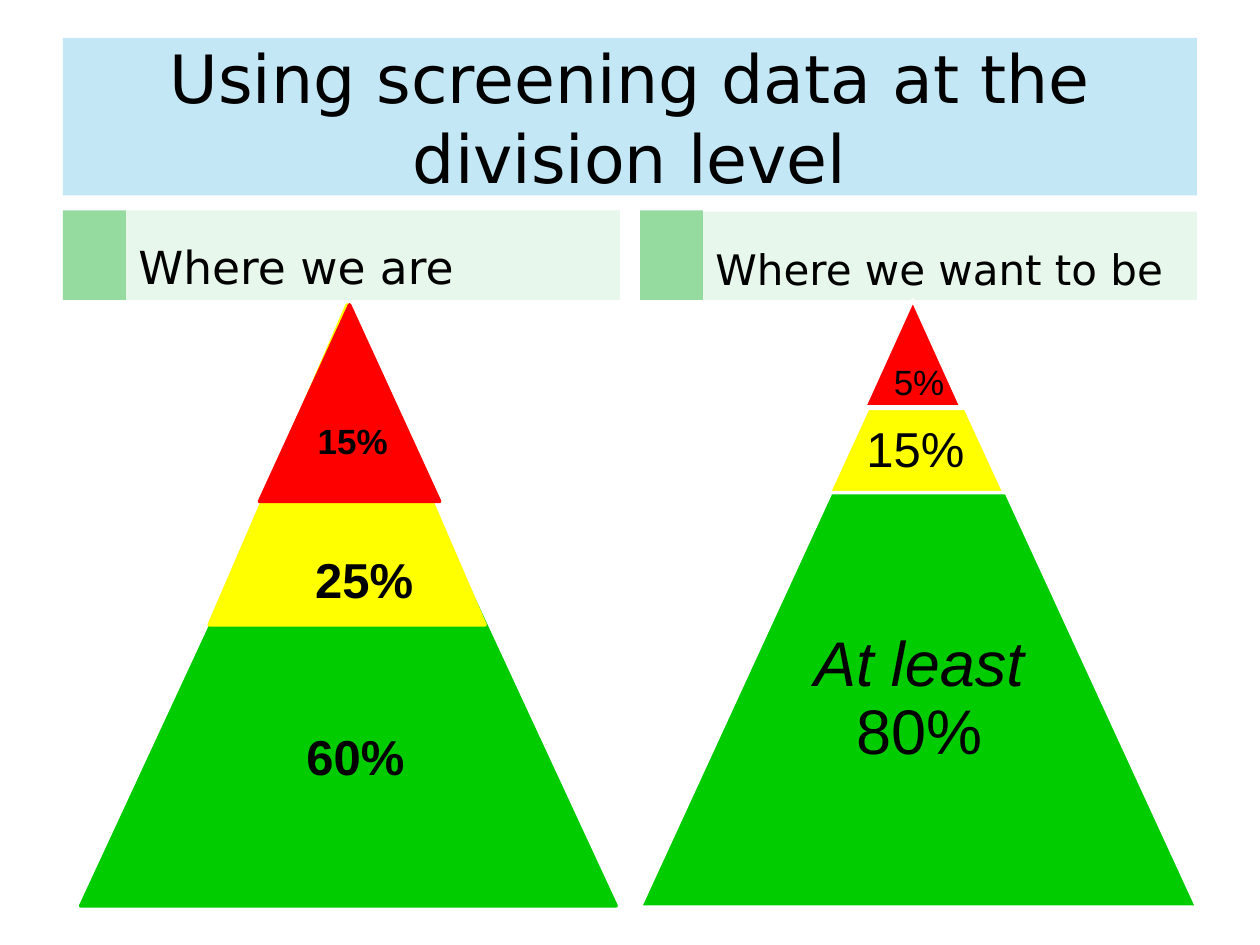
import pptx
import pptx.util
from lxml import etree
from pptx.dml.color import RGBColor
from pptx.enum.shapes import MSO_SHAPE
from pptx.enum.text import MSO_ANCHOR, PP_ALIGN
from pptx.oxml.ns import qn

SCALE = 9144  # EMU per px, 100 px to the inch
RED, YELLOW, GREEN = "FF0000", "FFFF00", "00CC00"
BLACK, WHITE = "000000", "FFFFFF"


def px(length):
    return pptx.util.Emu(length * SCALE)


def paint(color_format, color):
    color_format.rgb = RGBColor.from_string(color)


def add_shape(page, kind, box, fill, line=None, adjust=None):
    shape = page.shapes.add_shape(kind, *map(px, box))
    shape.shadow.inherit = False
    shape.fill.solid()
    paint(shape.fill.fore_color, fill)
    if line:
        paint(shape.line.color, line)
        shape.line.width = pptx.util.Pt(2)
    else:
        shape.line.fill.background()
    if adjust is not None:
        shape.adjustments[0] = adjust
    return shape


def set_alpha(shape, percent):
    color = shape.fill._xPr.find(qn("a:solidFill"))[0]
    etree.SubElement(color, qn("a:alpha"), val=str(percent * 1000))


def write(shape, spans, size, font="Arial", align=PP_ALIGN.CENTER,
          anchor=MSO_ANCHOR.MIDDLE, inset=(10, 5), spacing=None):
    """Write one paragraph; spans are (text, style) pairs, style naming font flags."""
    frame = shape.text_frame
    frame.word_wrap = True
    frame.vertical_anchor = anchor
    frame.margin_left = frame.margin_right = px(inset[0])
    frame.margin_top = frame.margin_bottom = px(inset[1])
    para = frame.paragraphs[0]
    para.alignment = align
    if spacing:
        para.line_spacing = spacing
    for text, style in spans:
        span = para.add_run()
        span.text = text
        span.font.name = font
        span.font.size = pptx.util.Pt(size)
        paint(span.font.color, BLACK)
        for flag in style:
            setattr(span.font, flag, True)


def add_label(page, box, spans, size, **layout):
    label = page.shapes.add_textbox(*map(px, box))
    write(label, spans, size, **layout)


def add_title(page, box, text):
    banner = add_shape(page, MSO_SHAPE.RECTANGLE, box, "A9DCF2")
    set_alpha(banner, 68)
    write(banner, [(text, ())], 38, font="DejaVu Sans")


def add_heading(page, box, text, size, drop=0):
    """Green tab followed by a pale bar, whose top sits lower by drop."""
    left, top, width, height = box
    tab = 50
    add_shape(page, MSO_SHAPE.RECTANGLE, (left, top, tab, height), "95DA9F")
    bar = add_shape(page, MSO_SHAPE.RECTANGLE,
                    (left + tab, top + drop, width - tab, height - drop), "E8F7EB")
    write(bar, [(text, ())], size, font="DejaVu Sans",
          align=PP_ALIGN.LEFT, anchor=MSO_ANCHOR.BOTTOM)


def add_current_pyramid(page, box):
    """Overlapping triangles, the largest at the back."""
    left, top, width, height = box
    triangles = [
        (0, 19, width, height - 19, GREEN),
        (102, 0, 219, 254, YELLOW),
        (142, 0, 143, 156, RED),
    ]
    for x, y, wide, high, color in triangles:
        add_shape(page, MSO_SHAPE.ISOSCELES_TRIANGLE,
                  (left + x, top + y, wide, high), color, color)
    labels = [("60%", 135, 330, 56, 28), ("25%", 142, 189, 56, 28),
              ("15%", 133, 86, 43, 20)]
    for text, x, y, high, size in labels:
        add_label(page, (left + x, top + y, 166, high), [(text, ("bold",))],
                  size, anchor=MSO_ANCHOR.TOP)


def add_target_pyramid(page, box):
    """Tiers stacked on one centre line, each with a label box inside it."""
    left, top, width, height = box
    middle, bottom = MSO_ANCHOR.MIDDLE, MSO_ANCHOR.BOTTOM
    # x, y, width, height, slope, colour, label x, label width, spans, size, inset, anchor
    tiers = [
        (178, 0, 77, 85, 0.5, RED, 183, 77, [("5%", ())], 20, 3, bottom),
        (149, 86, 141, 69, 0.46, YELLOW, 173, 91, [("15%", ())], 28, 4, middle),
        (0, 153, width, height - 153, 0.46, GREEN, 78, 287,
         [("At least ", ("italic",)), ("80%", ())], 36, 6, middle),
    ]
    for x, y, wide, high, slope, color, label_x, label_wide, spans, size, inset, anchor in tiers:
        add_shape(page, MSO_SHAPE.TRAPEZOID, (left + x, top + y, wide, high),
                  color, WHITE, slope)
        add_label(page, (left + label_x, top + y, label_wide, high), spans, size,
                  anchor=anchor, inset=(inset, inset), spacing=0.9)


def main():
    deck = pptx.Presentation()
    deck.slide_width, deck.slide_height = px(1000), px(750)
    page = deck.slides.add_slide(deck.slide_layouts[6])
    add_title(page, (50, 30, 900, 125), "Using screening data at the division level")
    add_heading(page, (50, 167, 442, 71), "Where we are", 26)
    add_heading(page, (508, 167, 442, 71), "Where we want to be", 24, drop=1)
    add_target_pyramid(page, (508, 238, 442, 482))
    add_current_pyramid(page, (64, 242, 425, 477))
    deck.save("out.pptx")


if __name__ == "__main__":
    main()
